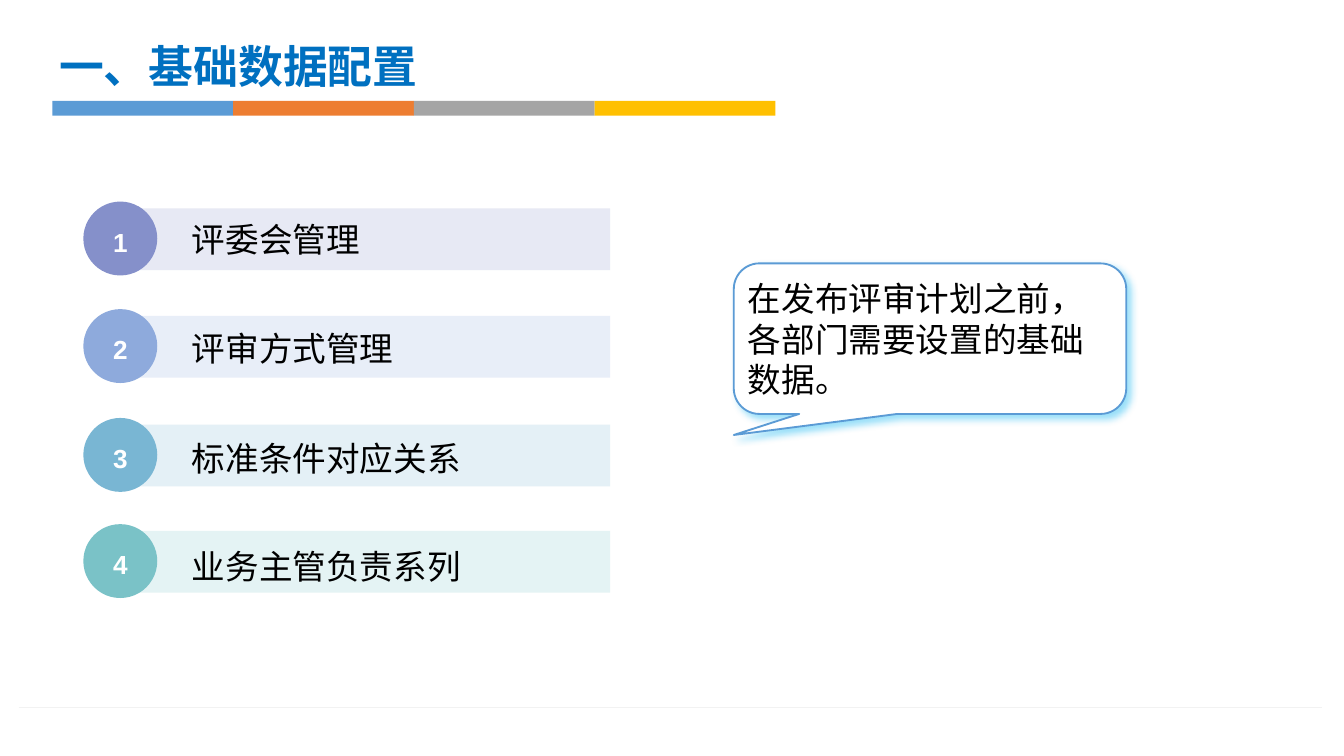
from lxml import etree
from pptx import Presentation
from pptx.dml.color import RGBColor
from pptx.enum.shapes import MSO_CONNECTOR, MSO_SHAPE
from pptx.enum.text import MSO_ANCHOR, PP_ALIGN
from pptx.oxml.ns import qn
from pptx.util import Inches, Pt

RECTANGLE = MSO_SHAPE.RECTANGLE
OVAL = MSO_SHAPE.OVAL
CALLOUT = MSO_SHAPE.ROUNDED_RECTANGULAR_CALLOUT
STRAIGHT = MSO_CONNECTOR.STRAIGHT
TOP, MIDDLE = MSO_ANCHOR.TOP, MSO_ANCHOR.MIDDLE
LEFT, CENTER = PP_ALIGN.LEFT, PP_ALIGN.CENTER
CHINESE_FONT = "Noto Sans CJK SC"

STRIPE_COLORS = ["5B9BD5", "ED7D31", "A5A5A5", "FFC000"]
ROWS = [
    ("评委会管理", 1.5, 0.04, 1.2, "8590CA", "E7E9F4"),
    ("评审方式管理", 2.3, 0.05, 1.2, "8EAADC", "E8EEF8"),
    ("标准条件对应关系", 3.11, 0.09, 1.0, "79B6D3", "E4F0F6"),
    ("业务主管负责系列", 3.9, 0.07, 1.2, "7AC2C7", "E4F3F4"),
]


def color(value):
    return RGBColor.from_string(value)


def add_block(page, kind, left, top, width, height, fill):
    block = page.shapes.add_shape(
        kind, Inches(left), Inches(top), Inches(width), Inches(height))
    block.shadow.inherit = False
    block.fill.solid()
    block.fill.fore_color.rgb = color(fill)
    block.line.fill.background()
    return block


def add_text_box(page, left, top, width, height):
    return page.shapes.add_textbox(
        Inches(left), Inches(top), Inches(width), Inches(height))


def write_text(box, text, size=18, font=CHINESE_FONT, fill="000000", bold=False,
               align=LEFT, anchor=MIDDLE, spacing=1.0, tracking=0, wrap=True, inset=None):
    frame = box.text_frame
    frame.word_wrap = wrap
    frame.vertical_anchor = anchor
    if inset is not None:
        frame.margin_left = frame.margin_right = Inches(inset)
        frame.margin_top = frame.margin_bottom = Inches(inset)
    para = frame.paragraphs[0]
    para.alignment = align
    para.line_spacing = spacing
    span = para.add_run()
    span.text = text
    span.font.size = Pt(size)
    span.font.bold = bold
    span.font.color.rgb = color(fill)
    span.font.name = font
    properties = span.font._element
    etree.SubElement(properties, qn("a:ea"), typeface=font)
    if tracking:
        properties.set("spc", str(int(tracking * 100)))


def add_glow_shadow(box, fill, opacity, blur, distance, angle):
    effects = box._element.spPr.find(qn("a:effectLst"))
    shadow = etree.SubElement(
        effects, qn("a:outerShdw"), blurRad=str(Pt(blur)), dist=str(Pt(distance)),
        dir=str(angle * 60000), algn="tl", rotWithShape="0")
    tint = etree.SubElement(shadow, qn("a:srgbClr"), val=fill)
    etree.SubElement(tint, qn("a:alpha"), val=str(opacity * 1000))


def add_footer_rule(page, left, top, width):
    rule = page.shapes.add_connector(
        STRAIGHT, Inches(left), Inches(top), Inches(left + width), Inches(top))
    rule.line.color.rgb = color("F2F2F2")
    rule.line.width = Pt(0.25)
    etree.SubElement(rule._element.spPr, qn("a:effectLst"))


def add_heading(page, left, top, width):
    title = add_text_box(page, left, top, 2.81, 0.51)
    write_text(title, "一、基础数据配置", size=24, fill="0070C0", bold=True,
               anchor=TOP, wrap=False, inset=0.05)
    stripe = width / len(STRIPE_COLORS)
    for index, fill in enumerate(STRIPE_COLORS):
        add_block(page, RECTANGLE, left + index * stripe, top + 0.51, stripe, 0.11, fill)


def add_row(page, left, top, width, number, text, label_offset, spacing, accent, tint):
    add_block(page, RECTANGLE, left + 0.28, top + 0.05, width - 0.28, 0.46, tint)
    badge = add_block(page, OVAL, left, top, 0.55, 0.55, accent)
    write_text(badge, str(number), size=14, font="Arial", fill="FFFFFF", bold=True,
               align=CENTER, spacing=1.2, tracking=1.5)
    label = add_text_box(page, left + 0.71, top + label_offset, 3.1, 0.42)
    write_text(label, text, spacing=spacing)


def add_callout(page, left, top, width, height):
    callout = add_block(page, CALLOUT, left, top, width, height, "FFFFFF")
    for index, value in enumerate([-0.5, 0.64, 0.17]):
        callout.adjustments[index] = value
    callout.line.color.rgb = color("5B9BD5")
    callout.line.width = Pt(1)
    add_glow_shadow(callout, "00B0F0", opacity=40, blur=4, distance=3, angle=45)
    write_text(callout, "在发布评审计划之前，各部门需要设置的基础数据。", inset=0.05)


def main():
    deck = Presentation()
    deck.slide_width = Inches(10)
    deck.slide_height = deck.slide_width * 9 // 16
    page = deck.slides.add_slide(deck.slide_layouts[6])
    add_footer_rule(page, 0.14, 5.26, 9.7)
    add_heading(page, 0.39, 0.24, 5.38)
    for number, (text, top, offset, spacing, accent, tint) in enumerate(ROWS, 1):
        add_row(page, 0.62, top, 3.92, number, text, offset, spacing, accent, tint)
    add_callout(page, 5.46, 1.96, 2.92, 1.12)
    deck.save("out.pptx")


if __name__ == "__main__":
    main()
